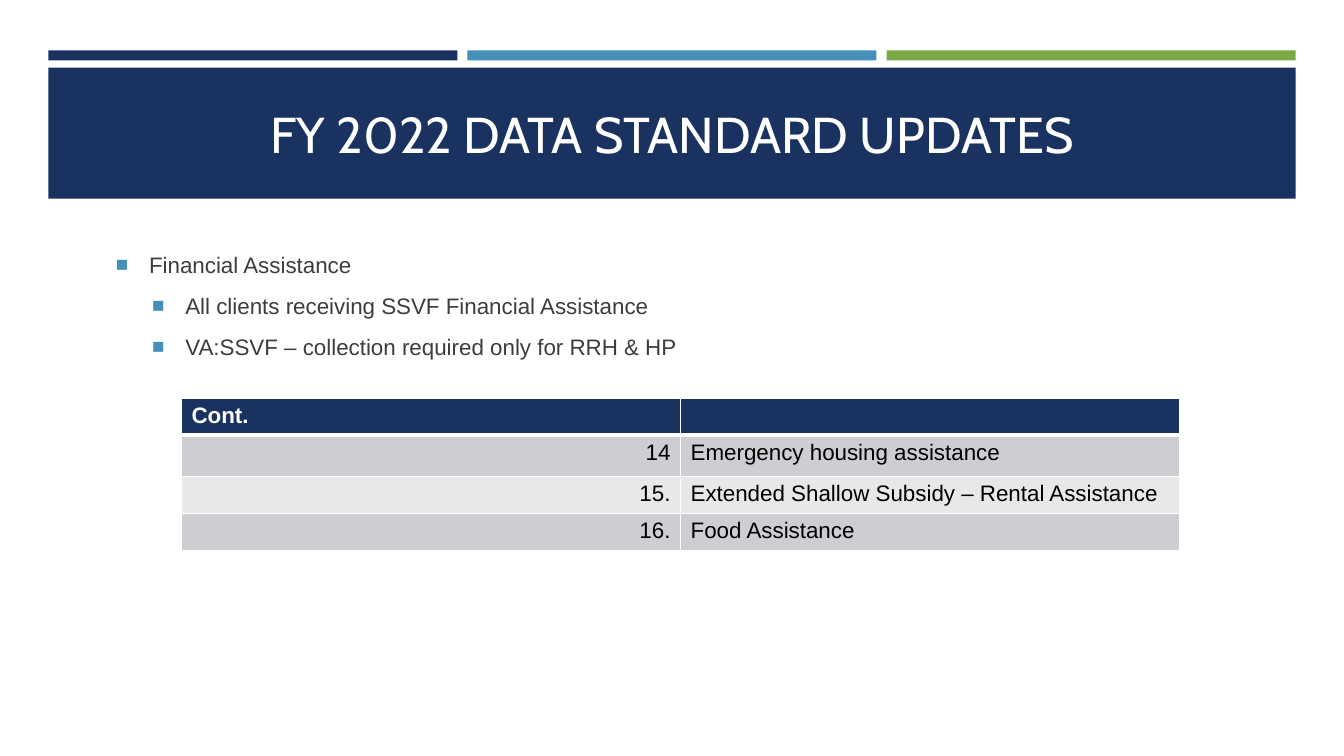
from dataclasses import dataclass

from lxml import etree
from pptx import Presentation
from pptx.dml.color import RGBColor
from pptx.enum.shapes import MSO_SHAPE
from pptx.enum.text import MSO_ANCHOR, PP_ALIGN
from pptx.oxml.ns import qn
from pptx.util import Inches, Pt

RECT = MSO_SHAPE.RECTANGLE
MIDDLE = MSO_ANCHOR.MIDDLE
LEFT, CENTER, RIGHT = PP_ALIGN.LEFT, PP_ALIGN.CENTER, PP_ALIGN.RIGHT


@dataclass(frozen=True)
class Theme:
    """Colours, fonts and type sizes of the slide."""
    navy: str = "1A3260"
    blue: str = "4590B8"
    green: str = "7BA946"
    white: str = "FFFFFF"
    black: str = "000000"
    gray: str = "3D3D3D"
    bands: tuple = ("CDCED2", "E8E8EA")
    head: str = "Cabin"
    body: str = "Arial"
    title: int = 36
    text: int = 16


THEME = Theme()


def style(para, face, size, color, bold=False, align=LEFT):
    """Set the font and alignment of a paragraph."""
    font = para.font
    font.name, font.size, font.bold = face, Pt(size), bold
    font.color.rgb = RGBColor.from_string(color)
    para.alignment = align


def add_bar(slide, x, y, w, h, color):
    """Draw a plain filled rectangle."""
    bar = slide.shapes.add_shape(RECT, Inches(x), Inches(y), Inches(w), Inches(h))
    bar.shadow.inherit = False
    bar.fill.solid()
    bar.fill.fore_color.rgb = RGBColor.from_string(color)
    bar.line.fill.background()


def add_frame(slide, x, y, w, h):
    """Add a wrapping, vertically centred text box and return its frame."""
    box = slide.shapes.add_textbox(Inches(x), Inches(y), Inches(w), Inches(h))
    frame = box.text_frame
    frame.word_wrap = True
    frame.vertical_anchor = MIDDLE
    return frame


def add_header(slide, x, y, w, h, title):
    """Draw the three colour strips and the title band."""
    gap, strip, top = 0.1, 0.1, 0.17
    part = (w - 2 * gap) / 3
    for i, color in enumerate((THEME.navy, THEME.blue, THEME.green)):
        add_bar(slide, x + i * (part + gap), y, part, strip, color)
    add_bar(slide, x, y + top, w, h - top, THEME.navy)
    para = add_frame(slide, x + 0.16, y + top + 0.1, w - 0.32, h - top - 0.2).paragraphs[0]
    para.text = title
    style(para, THEME.head, THEME.title, THEME.white, align=CENTER)


def set_bullet(para, level):
    """Give a paragraph a square bullet and a hanging indent."""
    props = para._p.get_or_add_pPr()
    props.set("marL", str(Inches(0.33 + 0.36 * level)))
    props.set("indent", str(Inches(-0.33)))
    color = etree.Element(qn("a:buClr"))
    etree.SubElement(color, qn("a:srgbClr"), val=THEME.blue)
    size = etree.Element(qn("a:buSzPct"), val="92000")
    face = etree.Element(qn("a:buFont"), typeface=THEME.body)
    char = etree.Element(qn("a:buChar"), char="■")
    last = props.find(qn("a:defRPr"))
    for item in (color, size, face, char):
        last.addprevious(item)


def add_list(slide, x, y, w, h, items):
    """Place a bulleted list of (level, text) pairs."""
    frame = add_frame(slide, x, y, w, h)
    for i, (level, text) in enumerate(items):
        para = frame.add_paragraph() if i else frame.paragraphs[0]
        para.text, para.level = text, level
        para.space_before, para.space_after = Pt(4), Pt(6)
        style(para, THEME.body, THEME.text, THEME.gray)
        set_bullet(para, level)


def set_edges(cell, top, base):
    """Draw white borders on a cell, with top and base widths in points."""
    props = cell._tc.get_or_add_tcPr()
    for i, (side, width) in enumerate(zip("LRTB", (1, 1, top, base))):
        line = etree.Element(qn(f"a:ln{side}"), w=str(Pt(width)))
        fill = etree.SubElement(line, qn("a:solidFill"))
        etree.SubElement(fill, qn("a:srgbClr"), val=THEME.white)
        props.insert(i, line)


def add_grid(slide, x, y, w, heights, rows):
    """Place a two-column table with a dark head row and banded rows."""
    shape = slide.shapes.add_table(len(rows), 2, Inches(x), Inches(y),
                                   Inches(w), Inches(sum(heights)))
    table = shape.table
    table.first_row = table.horz_banding = False
    for col in table.columns:
        col.width = Inches(w / 2)
    for r, row in enumerate(rows):
        table.rows[r].height = Inches(heights[r])
        head = r == 0
        back = THEME.navy if head else THEME.bands[(r - 1) % 2]
        for c, text in enumerate(row):
            cell = table.cell(r, c)
            cell.fill.solid()
            cell.fill.fore_color.rgb = RGBColor.from_string(back)
            set_edges(cell, 3 if r == 1 else 1, 3 if head else 1)
            para = cell.text_frame.paragraphs[0]
            if text:
                para.text = text
            else:
                cell.margin_top = cell.margin_bottom = 0
            style(para, THEME.body, THEME.text, THEME.white if head else THEME.black,
                  head, LEFT if head or c else RIGHT)


def main():
    """Build the slide and save it."""
    deck = Presentation()
    deck.slide_width, deck.slide_height = Inches(13.33), Inches(7.5)
    slide = deck.slides.add_slide(deck.slide_layouts[6])
    add_header(slide, 0.48, 0.5, 12.37, 1.47, "FY 2022 DATA STANDARD UPDATES")
    add_list(slide, 1.05, 2.19, 10.04, 1.68, [
        (0, "Financial Assistance"),
        (1, "All clients receiving SSVF Financial Assistance"),
        (1, "VA:SSVF – collection required only for RRH & HP"),
    ])
    add_grid(slide, 1.8, 3.95, 9.9, (0.34, 0.41, 0.34, 0.34), [
        ("Cont.", ""),
        ("14", "Emergency housing assistance"),
        ("15.", "Extended Shallow Subsidy – Rental Assistance"),
        ("16.", "Food Assistance"),
    ])
    deck.save("out.pptx")


if __name__ == "__main__":
    main()
